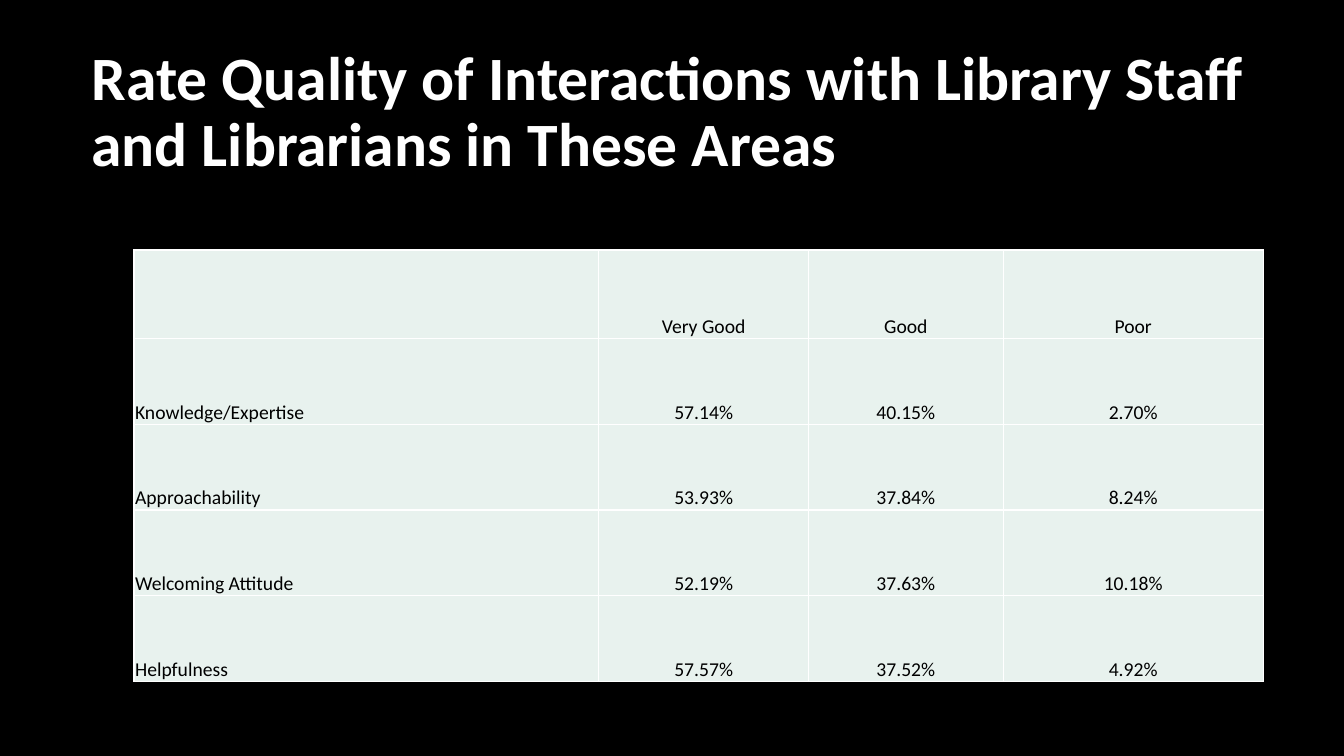
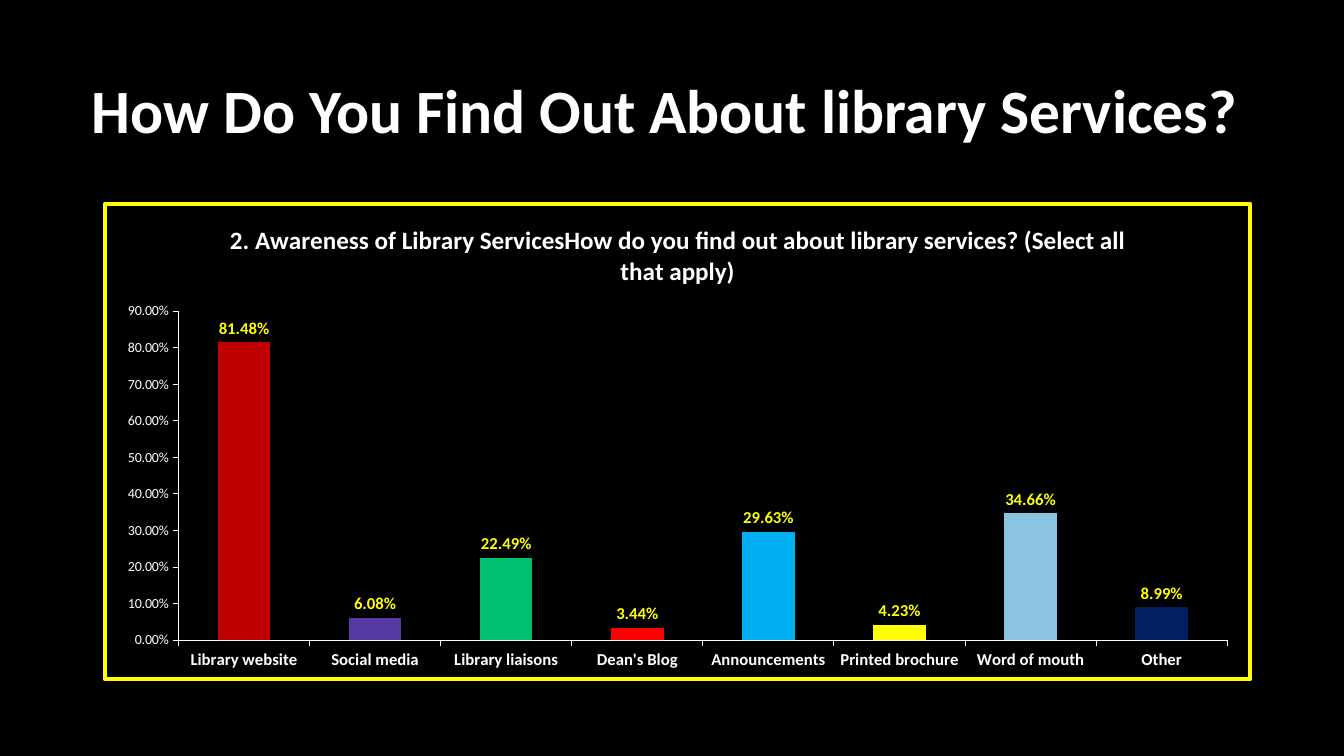
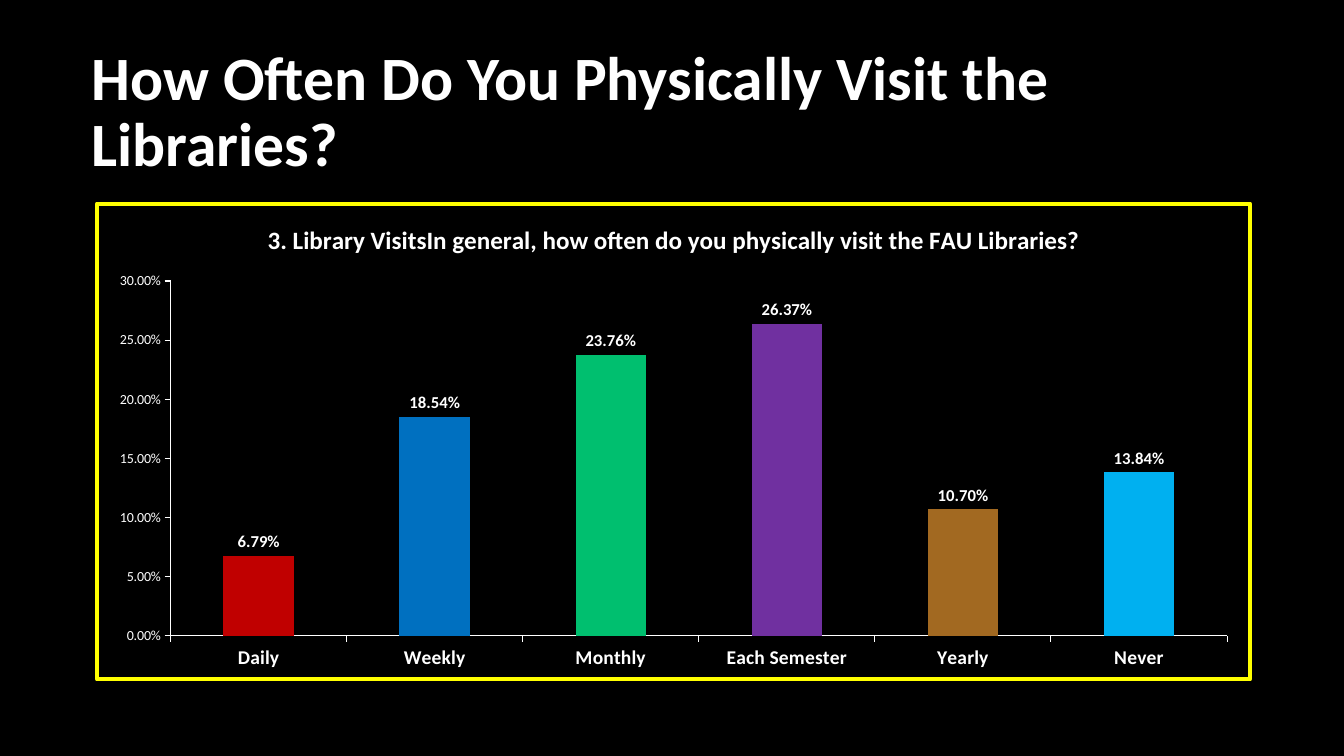
from lxml.etree import SubElement
from pptx import Presentation
from pptx.chart.data import CategoryChartData
from pptx.dml.color import RGBColor
from pptx.enum.chart import XL_CHART_TYPE, XL_LABEL_POSITION, XL_TICK_MARK
from pptx.enum.text import MSO_ANCHOR, PP_ALIGN
from pptx.oxml import parse_xml
from pptx.oxml.ns import nsdecls, qn
from pptx.util import Inches, Pt

FONT = "Calibri"
BLACK = RGBColor(0, 0, 0)
WHITE = RGBColor(255, 255, 255)
MINT = RGBColor(0xE8, 0xF2, 0xEE)
YELLOW = RGBColor(255, 255, 0)
GREEN = RGBColor(0x00, 0xBF, 0x6F)
CRIMSON = RGBColor(0xC0, 0, 0)
RED = RGBColor(255, 0, 0)
INDIGO = RGBColor(0x57, 0x3A, 0xA2)
PURPLE = RGBColor(0x70, 0x30, 0xA0)
SKY = RGBColor(0x00, 0xB0, 0xF0)
PALE = RGBColor(0x8B, 0xC4, 0xE0)
BLUE = RGBColor(0x00, 0x70, 0xC0)
NAVY = RGBColor(0x00, 0x20, 0x60)
BROWN = RGBColor(0xA2, 0x69, 0x21)

RATINGS = [
    ("", "Very Good", "Good", "Poor"),
    ("Knowledge/Expertise", "57.14%", "40.15%", "2.70%"),
    ("Approachability", "53.93%", "37.84%", "8.24%"),
    ("Welcoming Attitude", "52.19%", "37.63%", "10.18%"),
    ("Helpfulness", "57.57%", "37.52%", "4.92%"),
]
SOURCES = [
    ("Library website", 0.8148, CRIMSON),
    ("Social media", 0.0608, INDIGO),
    ("Library liaisons", 0.2249, GREEN),
    ("Dean's Blog", 0.0344, RED),
    ("Announcements", 0.2963, SKY),
    ("Printed brochure", 0.0423, YELLOW),
    ("Word of mouth", 0.3466, PALE),
    ("Other", 0.0899, NAVY),
]
VISITS = [
    ("Daily", 0.0679, CRIMSON),
    ("Weekly", 0.1854, BLUE),
    ("Monthly", 0.2376, GREEN),
    ("Each Semester", 0.2637, PURPLE),
    ("Yearly", 0.107, BROWN),
    ("Never", 0.1384, SKY),
]


def set_font(font, size, color, bold=False):
    font.name = FONT
    font.size = Pt(size)
    font.bold = bold
    font.color.rgb = color


def add_slide(deck, title):
    slide = deck.slides.add_slide(deck.slide_layouts[6])
    fill = slide.background.fill
    fill.solid()
    fill.fore_color.rgb = BLACK
    box = slide.shapes.add_textbox(Inches(0.81), Inches(0.4), Inches(11.89), Inches(1.45))
    frame = box.text_frame
    frame.word_wrap = True
    frame.vertical_anchor = MSO_ANCHOR.MIDDLE
    para = frame.paragraphs[0]
    para.text = title
    para.line_spacing = 0.9
    set_font(para.font, 44, WHITE, True)
    return slide


def add_borders(cell):
    props = cell._tc.get_or_add_tcPr()
    for place, side in enumerate(("lnL", "lnR", "lnT", "lnB")):
        line = parse_xml(f'<a:{side} {nsdecls("a")} w="{Pt(1)}"/>')
        fill = SubElement(line, qn("a:solidFill"))
        SubElement(fill, qn("a:srgbClr"), val=str(WHITE))
        props.insert(place, line)


def fill_cell(cell, text, align):
    cell.fill.solid()
    cell.fill.fore_color.rgb = MINT
    cell.vertical_anchor = MSO_ANCHOR.BOTTOM
    cell.margin_left = cell.margin_top = cell.margin_right = Inches(0.01)
    cell.margin_bottom = 0
    para = cell.text_frame.paragraphs[0]
    para.text = text
    para.alignment = align
    set_font(para.font, 14, BLACK)
    add_borders(cell)


def add_grid(slide, rows, widths, heights):
    table = slide.shapes.add_table(
        len(rows), len(widths), Inches(1.33), Inches(2.48),
        Inches(sum(widths)), Inches(sum(heights))).table
    table.first_row = table.horz_banding = False
    for column, width in zip(table.columns, widths):
        column.width = Inches(width)
    for row, height, texts in zip(table.rows, heights, rows):
        row.height = Inches(height)
        for index, text in enumerate(texts):
            align = PP_ALIGN.CENTER if index else PP_ALIGN.LEFT
            fill_cell(row.cells[index], text, align)


def add_frame(chart):
    frame = parse_xml(
        f'<c:spPr {nsdecls("c", "a")}><a:noFill/><a:ln w="{Pt(3)}">'
        f'<a:solidFill><a:srgbClr val="{YELLOW}"/></a:solidFill><a:round/>'
        '</a:ln></c:spPr>')
    chart.element.find(qn("c:chart")).addnext(frame)


def style_axis(axis, size, bold=False):
    axis.has_major_gridlines = False
    axis.major_tick_mark = XL_TICK_MARK.OUTSIDE
    axis.minor_tick_mark = XL_TICK_MARK.NONE
    axis.format.line.color.rgb = WHITE
    axis.format.line.width = Pt(0.75)
    set_font(axis.tick_labels.font, size, WHITE, bold)


def add_bars(slide, left, title, bars, top, step, size, tint):
    names, values, colors = zip(*bars)
    data = CategoryChartData(number_format="0.00%")
    data.categories = names
    data.add_series("Series 1", values)
    chart = slide.shapes.add_chart(
        XL_CHART_TYPE.COLUMN_CLUSTERED, Inches(left), Inches(2),
        Inches(12.42 - left), Inches(4.76), data).chart
    set_font(chart.font, 10, WHITE)
    add_frame(chart)
    chart.has_legend = False
    para = chart.chart_title.text_frame.paragraphs[0]
    para.text = title
    set_font(para.font, 18, WHITE, True)
    chart.chart_title.include_in_layout = False

    style_axis(chart.category_axis, size, True)
    scale = chart.value_axis
    style_axis(scale, 10)
    scale.minimum_scale = 0
    scale.maximum_scale = top
    scale.major_unit = step
    scale.tick_labels.number_format = "0.00%"
    scale.tick_labels.number_format_is_linked = False

    plot = chart.plots[0]
    plot.gap_width = 150
    plot.vary_by_categories = False
    plot.has_data_labels = True
    labels = plot.data_labels
    labels.show_value = True
    labels.position = XL_LABEL_POSITION.OUTSIDE_END
    labels.number_format = "0.00%"
    labels.number_format_is_linked = False
    set_font(labels.font, 12, tint, True)
    series = plot.series[0]
    series.invert_if_negative = False
    series.format.fill.solid()
    series.format.fill.fore_color.rgb = GREEN
    for index, color in enumerate(colors):
        if color != GREEN:
            fill = series.points[index].format.fill
            fill.solid()
            fill.fore_color.rgb = color


def main():
    deck = Presentation()
    deck.slide_width = Inches(13.33)
    deck.slide_height = Inches(7.5)

    slide = add_slide(
        deck, "Rate Quality of Interactions with Library Staff and Librarians in These Areas")
    add_grid(slide, RATINGS, [4.61, 2.08, 1.93, 2.58], [0.88] + [0.85] * 4)

    slide = add_slide(deck, "How Do You Find Out About library Services?")
    add_bars(
        slide, 1.02,
        "2. Awareness of Library ServicesHow do you find out about library services? "
        "(Select all that apply)",
        SOURCES, 0.9, 0.1, 12, YELLOW)

    slide = add_slide(deck, "How Often Do You Physically Visit the Libraries?")
    add_bars(
        slide, 0.94,
        "3. Library VisitsIn general, how often do you physically visit the FAU Libraries?",
        VISITS, 0.3, 0.05, 14, WHITE)

    deck.save("out.pptx")


if __name__ == "__main__":
    main()
